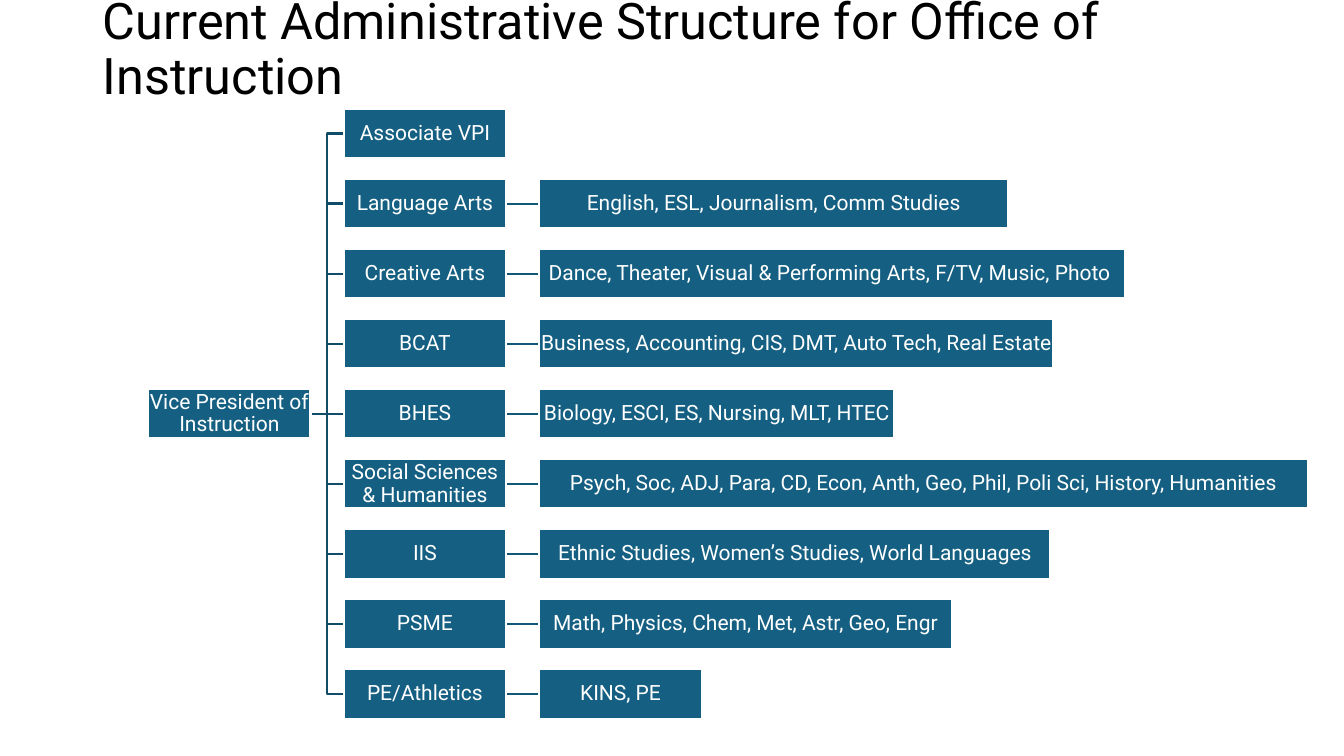
from lxml import etree
from pptx import Presentation
from pptx.dml.color import RGBColor
from pptx.enum.shapes import MSO_CONNECTOR, MSO_SHAPE
from pptx.enum.text import MSO_ANCHOR, MSO_AUTO_SIZE, PP_ALIGN
from pptx.oxml.ns import qn
from pptx.util import Inches, Pt

RECT = MSO_SHAPE.RECTANGLE
STRAIGHT, ELBOW = MSO_CONNECTOR.STRAIGHT, MSO_CONNECTOR.ELBOW
MIDDLE = MSO_ANCHOR.MIDDLE
LEFT, CENTER = PP_ALIGN.LEFT, PP_ALIGN.CENTER
NO_FIT = MSO_AUTO_SIZE.NONE

FONT = "Roboto"
WHITE, BLACK, BLUE = "FFFFFF", "000000", "156082"
TRUNK_LINE, SUBJECT_LINE = "114D68", "135776"
NODE_W, NODE_H, GAP = 1.61, 0.49, 0.33
SIDE_LEFT, SIDE_RIGHT = 1, 3

ROOT = "Vice President of Instruction"
DIVISIONS = [
    ("Associate VPI", None, 0),
    ("Language Arts", "English, ESL, Journalism, Comm Studies", 4.65),
    ("Creative Arts", "Dance, Theater, Visual & Performing Arts, F/TV, Music, Photo ", 5.81),
    ("BCAT", "Business, Accounting, CIS, DMT, Auto Tech, Real Estate", 5.1),
    ("BHES", "Biology, ESCI, ES, Nursing, MLT, HTEC", 3.52),
    ("Social Sciences & Humanities",
     "Psych, Soc, ADJ, Para, CD, Econ, Anth, Geo, Phil, Poli Sci, History, Humanities", 7.62),
    ("IIS", "Ethnic Studies, Women’s Studies, World Languages", 5.07),
    ("PSME", "Math, Physics, Chem, Met, Astr, Geo, Engr", 4.09),
    ("PE/Athletics", "KINS, PE", NODE_W),
]


def color(value):
    return RGBColor.from_string(value)


def add_text(tf, text, size, hue, align):
    tf.word_wrap = True
    tf.auto_size = NO_FIT
    tf.vertical_anchor = MIDDLE
    p = tf.paragraphs[0]
    p.alignment = align
    p.line_spacing = 0.9
    r = p.add_run()
    r.text = text
    r.font.name = FONT
    r.font.size = Pt(size)
    r.font.color.rgb = color(hue)
    return p


def add_title(s, text, x, y, w, h):
    sp = s.shapes.title
    sp.left, sp.top, sp.width, sp.height = map(Inches, (x, y, w, h))
    add_text(sp.text_frame, text, 36, BLACK, LEFT)


def add_node(s, text, x, y, w):
    sp = s.shapes.add_shape(RECT, *map(Inches, (x, y, w, NODE_H)))
    sp.shadow.inherit = False
    sp.fill.solid()
    sp.fill.fore_color.rgb = color(BLUE)
    sp.line.color.rgb = color(WHITE)
    sp.line.width = Pt(1.5)
    tf = sp.text_frame
    tf.margin_left = tf.margin_right = tf.margin_top = tf.margin_bottom = Inches(0.01)
    p = add_text(tf, text, 15, WHITE, CENTER)
    p.space_after = Pt(5.25)
    return sp


def add_link(s, start, end, hue, kind):
    c = s.shapes.add_connector(kind, 0, 0, 0, 0)
    c.begin_connect(start, SIDE_RIGHT)
    c.end_connect(end, SIDE_LEFT)
    c.line.color.rgb = color(hue)
    c.line.width = Pt(1.5)
    etree.SubElement(c.element.spPr, qn("a:effectLst"))
    c.element.getparent().insert(2, c.element)


def add_org_chart(s, x, y, h):
    division_x = x + NODE_W + GAP
    subject_x = division_x + NODE_W + GAP
    pitch = (h - NODE_H) / (len(DIVISIONS) - 1)
    middle = len(DIVISIONS) // 2
    root = add_node(s, ROOT, x, y + middle * pitch, NODE_W)
    for i, (name, subjects, width) in enumerate(DIVISIONS):
        top = y + i * pitch
        division = add_node(s, name, division_x, top, NODE_W)
        add_link(s, root, division, TRUNK_LINE, STRAIGHT if i == middle else ELBOW)
        if subjects:
            subject = add_node(s, subjects, subject_x, top, width)
            add_link(s, division, subject, SUBJECT_LINE, STRAIGHT)


def main():
    prs = Presentation()
    prs.slide_width, prs.slide_height = Inches(13.33), Inches(7.5)
    s = prs.slides.add_slide(prs.slide_layouts[5])
    add_title(s, "Current Administrative Structure for Office of Instruction",
              0.92, -0.22, 11.5, 1.45)
    add_org_chart(s, 1.47, 1.08, 6.05)
    prs.save("out.pptx")


if __name__ == "__main__":
    main()
